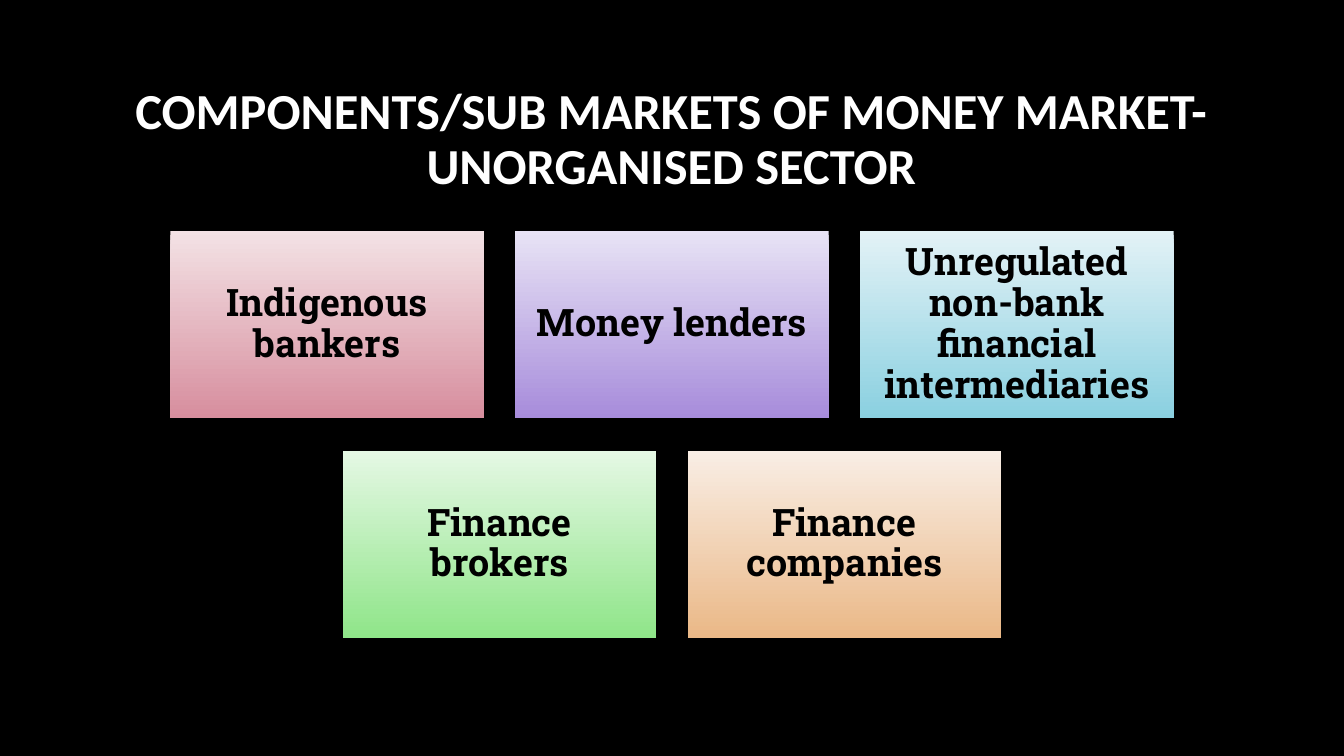
from pptx import Presentation
from pptx.dml.color import RGBColor
from pptx.enum.shapes import MSO_SHAPE as SHAPE
from pptx.enum.text import MSO_ANCHOR as ANCHOR, MSO_AUTO_SIZE as AUTO, PP_ALIGN as ALIGN
from pptx.util import Inches, Pt

COLORS = {
    "background": "000000",
    "title": "FFFFFF",
    "text": "000000",
    "rose": ("F3E2E5", "D78E9E"),
    "violet": ("E8E3F5", "A78CDB"),
    "aqua": ("E3F2F6", "8AD0E0"),
    "green": ("E5F8E4", "8FE589"),
    "orange": ("F9EEE5", "EAB887"),
}
ROWS = [
    [("Indigenous bankers", "rose"),
     ("Money lenders", "violet"),
     ("Unregulated non-bank financial intermediaries", "aqua")],
    [("Finance brokers", "green"),
     ("Finance companies", "orange")],
]
CENTER, TOP = 6.665, 2.29
BOX_W, BOX_H = 3.11, 1.86
STEP_X, STEP_Y = 3.42, 2.18


def write(shape, text, color, font):
    tf = shape.text_frame
    frame = {"word_wrap": True, "auto_size": AUTO.NONE, "vertical_anchor": ANCHOR.MIDDLE}
    for name, value in frame.items():
        setattr(tf, name, value)
    p = tf.paragraphs[0]
    p.alignment, p.line_spacing = ALIGN.CENTER, 0.9
    r = p.add_run()
    r.text = text
    for name, value in font.items():
        setattr(r.font, name, value)
    r.font.color.rgb = RGBColor.from_string(COLORS[color])


prs = Presentation()
prs.slide_width, prs.slide_height = Inches(13.33), Inches(7.5)
s = prs.slides.add_slide(prs.slide_layouts[5])
s.background.fill.solid()
s.background.fill.fore_color.rgb = RGBColor.from_string(COLORS["background"])

title = s.shapes.title
place = {"left": 1, "top": 0.67, "width": 11.32, "height": 1.45}
for name, value in place.items():
    setattr(title, name, Inches(value))
write(title, "COMPONENTS/SUB MARKETS OF MONEY MARKET- UNORGANISED SECTOR", "title",
      {"name": "Calibri", "size": Pt(36), "bold": True})

for row, boxes in enumerate(ROWS):
    left = CENTER - (BOX_W + STEP_X * (len(boxes) - 1)) / 2
    for col, (text, tint) in enumerate(boxes):
        sp = s.shapes.add_shape(SHAPE.RECTANGLE, Inches(left + col * STEP_X),
                                Inches(TOP + row * STEP_Y), Inches(BOX_W), Inches(BOX_H))
        sp.shadow.inherit = False
        sp.line.fill.background()
        sp.fill.gradient()
        sp.fill.gradient_angle = 270
        for stop, position, color in zip(sp.fill.gradient_stops, (0, 1), COLORS[tint]):
            stop.position = position
            stop.color.rgb = RGBColor.from_string(color)
        for side in ("left", "top", "right", "bottom"):
            setattr(sp.text_frame, f"margin_{side}", Inches(0.11))
        write(sp, text, "text", {"name": "Roboto Slab", "size": Pt(27), "bold": True})

prs.save("out.pptx")
